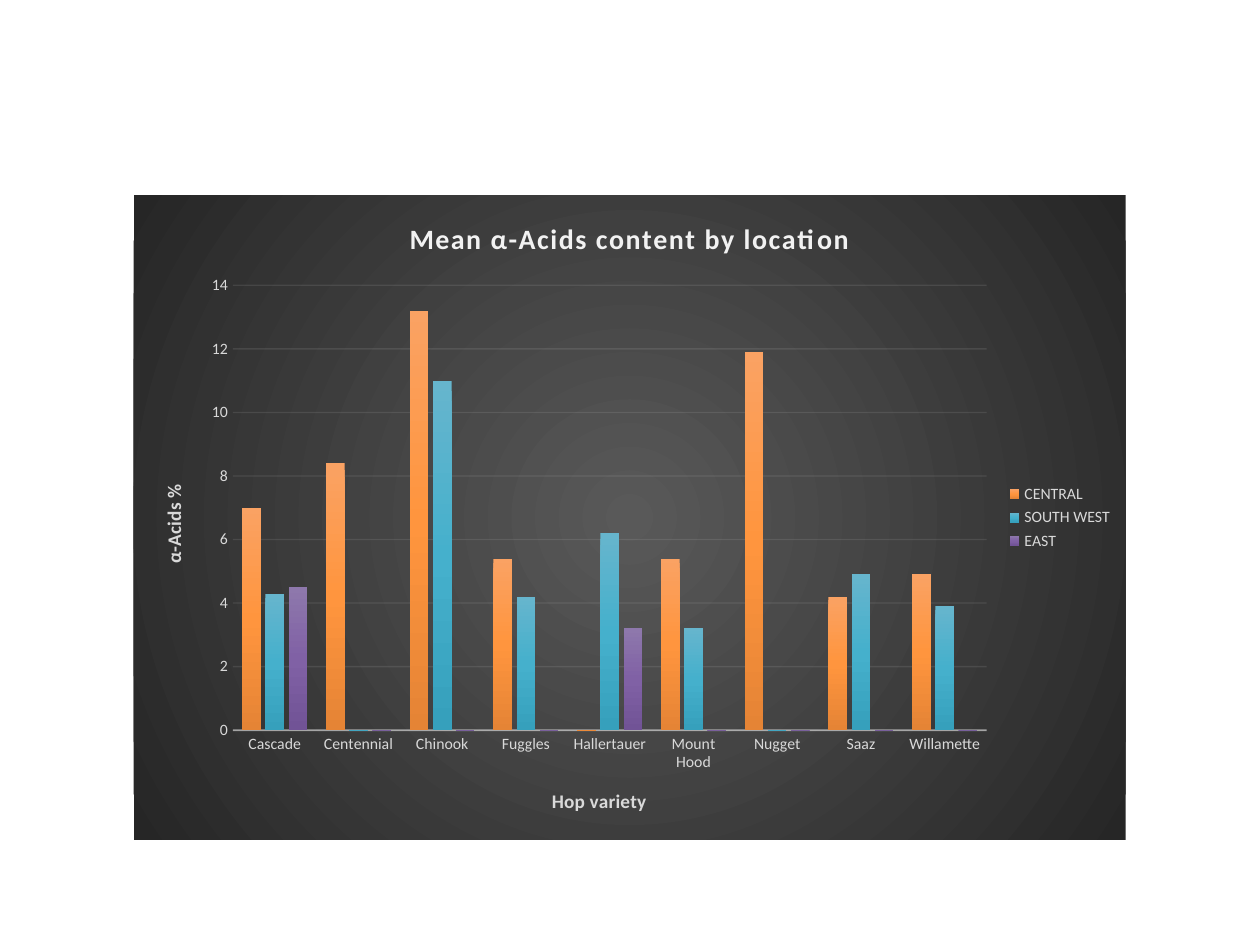
import pptx
import pptx.chart.data
import pptx.dml.color
import pptx.enum.chart
import pptx.oxml
import pptx.oxml.ns
import pptx.util
from lxml import etree

Pt = pptx.util.Pt
qn = pptx.oxml.ns.qn

TITLE = "Mean α-Acids content by location"
CATEGORY_TITLE = "Hop variety"
VALUE_TITLE = "α-Acids %"
VARIETIES = ["Cascade", "Centennial", "Chinook", "Fuggles", "Hallertauer",
             "Mount Hood", "Nugget", "Saaz", "Willamette"]
LOCATIONS = {
    "CENTRAL": [7, 8.4, 13.2, 5.4, 0, 5.4, 11.9, 4.2, 4.9],
    "SOUTH WEST": [4.3, 0, 11, 4.2, 6.2, 3.2, 0, 4.9, 3.9],
    "EAST": [4.5, 0, 0, 0, 3.2, 0, 0, 0, 0],
}
COLORS = {"title": "F2F2F2", "label": "D9D9D9", "line": "F2F2F2"}
BACKGROUND = [(0, "595959"), (100, "262626")]
BAR_GRADIENTS = {
    "CENTRAL": [(0, "FAA263"), (50, "FF953E"), (100, "E58435")],
    "SOUTH WEST": [(0, "66B5CD"), (50, "45B0CC"), (100, "36A0BC")],
    "EAST": [(0, "8E78AC"), (50, "8061A5"), (100, "715396")],
}
RADIAL = ('<a:path path="circle"><a:fillToRect l="50000" t="50000" '
          'r="50000" b="50000"/></a:path>')
DOWNWARD = '<a:lin ang="5400000" scaled="0"/>'
PLOT_AREA = {"x": 0.1, "y": 0.14, "w": 0.76, "h": 0.69}


def rgb(name):
    return pptx.dml.color.RGBColor.from_string(COLORS[name])


def gradient(stops, direction):
    stop_xml = "".join(
        f'<a:gs pos="{position * 1000}"><a:srgbClr val="{color}"/></a:gs>'
        for position, color in stops)
    return pptx.oxml.parse_xml(
        f'<a:gradFill {pptx.oxml.ns.nsdecls("a")} rotWithShape="1">'
        f'<a:gsLst>{stop_xml}</a:gsLst>{direction}</a:gradFill>')


def style_font(font, size, color, bold=False):
    font.name = "Calibri"
    font.size = Pt(size)
    font.bold = bold
    font.color.rgb = rgb(color)


def add_title(owner, text, size, color):
    """Title a chart or an axis, and return the run."""
    paragraph = getattr(owner, "chart_title", None) or owner.axis_title
    run = paragraph.text_frame.paragraphs[0].add_run()
    run.text = text
    style_font(run.font, size, color, bold=True)
    return run


def style_line(line, width, opacity):
    line.width = Pt(width)
    line.color.rgb = rgb("line")
    color = line._ln.find(".//" + qn("a:srgbClr"))
    etree.SubElement(color, qn("a:alpha"), val=str(opacity * 1000))


def place_plot_area(chart):
    plot_area = chart._chartSpace.chart.plotArea
    for old in plot_area.findall(qn("c:layout")):
        plot_area.remove(old)
    layout = etree.Element(qn("c:layout"))
    manual = etree.SubElement(layout, qn("c:manualLayout"))
    etree.SubElement(manual, qn("c:layoutTarget"), val="inner")
    for side in "xy":
        etree.SubElement(manual, qn(f"c:{side}Mode"), val="edge")
    for side, share in PLOT_AREA.items():
        etree.SubElement(manual, qn(f"c:{side}"), val=str(share))
    plot_area.insert(0, layout)


def fill_background(chart):
    properties = etree.Element(qn("c:spPr"))
    properties.append(gradient(BACKGROUND, RADIAL))
    outline = etree.SubElement(properties, qn("a:ln"))
    etree.SubElement(outline, qn("a:noFill"))
    chart._chartSpace.chart.addnext(properties)


def style_axes(chart):
    category_axis, value_axis = chart.category_axis, chart.value_axis
    for axis, text in ((category_axis, CATEGORY_TITLE), (value_axis, VALUE_TITLE)):
        add_title(axis, text, 11, "label")
        style_font(axis.tick_labels.font, 9, "label")
        axis.major_tick_mark = pptx.enum.chart.XL_TICK_MARK.NONE
        axis.minor_tick_mark = pptx.enum.chart.XL_TICK_MARK.NONE
    style_line(category_axis.format.line, 1, 54)
    value_axis.format.line.fill.background()
    style_line(value_axis.major_gridlines.format.line, 0.75, 10)
    value_axis.minimum_scale = 0
    value_axis.maximum_scale = 14
    value_axis.major_unit = 2
    value_axis.tick_labels.number_format = "0"
    value_axis.tick_labels.number_format_is_linked = False


def add_hop_chart(slide):
    data = pptx.chart.data.CategoryChartData()
    data.categories = VARIETIES
    for location, values in LOCATIONS.items():
        data.add_series(location, values)
    chart = slide.shapes.add_chart(
        pptx.enum.chart.XL_CHART_TYPE.COLUMN_CLUSTERED,
        Pt(76.4), Pt(111.5), Pt(566.8), Pt(368.5), data).chart
    style_font(chart.font, 10, "label")

    title_run = add_title(chart, TITLE, 16, "title")
    title_run.font._element.set("spc", "100")
    chart.chart_title.include_in_layout = False
    chart.has_legend = True
    chart.legend.position = pptx.enum.chart.XL_LEGEND_POSITION.RIGHT
    chart.legend.include_in_layout = False
    style_font(chart.legend.font, 9, "label")
    style_axes(chart)

    plot = chart.plots[0]
    plot.vary_by_categories = False
    plot.gap_width = 100
    plot.overlap = -24
    for series in plot.series:
        series.format.fill.gradient()
        old_fill = series._element.find(".//" + qn("a:gradFill"))
        old_fill.getparent().replace(
            old_fill, gradient(BAR_GRADIENTS[series.name], DOWNWARD))
    place_plot_area(chart)
    fill_background(chart)


def main():
    presentation = pptx.Presentation()
    presentation.slide_width = Pt(720)
    presentation.slide_height = Pt(540)
    slide = presentation.slides.add_slide(presentation.slide_layouts[6])
    add_hop_chart(slide)
    presentation.save("out.pptx")


if __name__ == "__main__":
    main()
